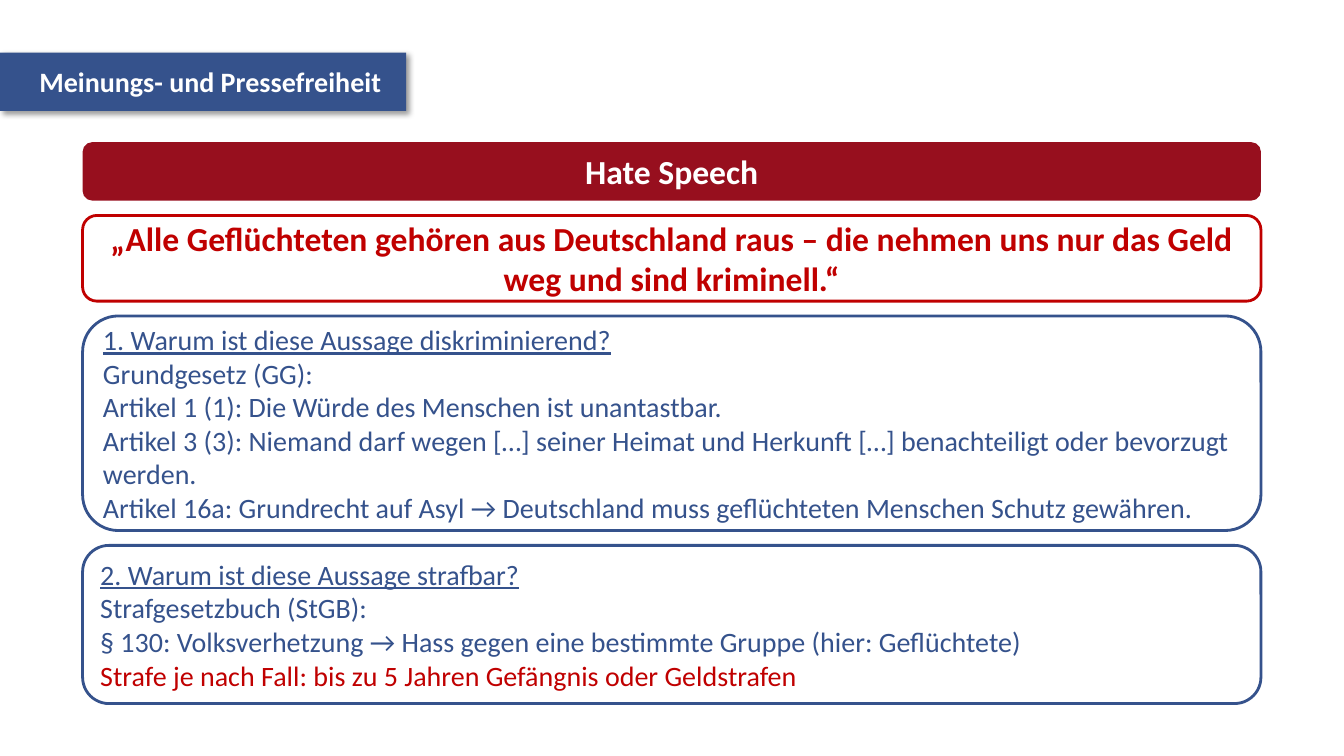
from lxml.etree import SubElement
from pptx import Presentation
from pptx.dml.color import RGBColor
from pptx.enum.shapes import MSO_SHAPE
from pptx.enum.text import MSO_ANCHOR, MSO_AUTO_SIZE, PP_ALIGN
from pptx.oxml.ns import qn
from pptx.util import Pt

BLUE = RGBColor(0x35, 0x52, 0x8C)
DARK_RED = RGBColor(0x97, 0x0F, 0x1E)
RED = RGBColor(0xC0, 0x00, 0x00)
WHITE = RGBColor(0xFF, 0xFF, 0xFF)

# Content: each paragraph is a list of (line, format) pairs
HEADING = {"size": Pt(24), "bold": True}
BODY = {"size": Pt(20), "color": BLUE}
QUESTION = {**BODY, "underline": True}

TOPIC = [[("Meinungs- und Pressefreiheit", {"size": Pt(20), "bold": True, "color": WHITE})]]
TITLE = [[("Hate Speech", {**HEADING, "color": WHITE})]]
QUOTE = [[("„Alle Geflüchteten gehören aus Deutschland raus – die nehmen uns nur das Geld "
           "weg und sind kriminell.“", {**HEADING, "color": RED})]]
DISCRIMINATION = [
    [("1. Warum ist diese Aussage diskriminierend?", QUESTION)],
    [("Grundgesetz (GG):", BODY)],
    [("Artikel 1 (1): Die Würde des Menschen ist unantastbar.", BODY)],
    [("Artikel 3 (3): Niemand darf wegen […] seiner Heimat und Herkunft […] "
      "benachteiligt oder bevorzugt werden.", BODY)],
    [("Artikel 16a: Grundrecht auf Asyl → Deutschland muss geflüchteten Menschen "
      "Schutz gewähren.", BODY)],
]
PENALTY = [
    [("2. Warum ist diese Aussage strafbar?", QUESTION)],
    [("Strafgesetzbuch (StGB):", BODY)],
    [("§ 130: Volksverhetzung → Hass gegen eine bestimmte Gruppe (hier: Geflüchtete)", BODY),
     ("Strafe je nach Fall: bis zu 5 Jahren Gefängnis oder Geldstrafen", {**BODY, "color": RED})],
]

# Stacked panels: content, height, fill, outline, alignment, space after
PANELS = [
    (TITLE, 41.8, DARK_RED, None, PP_ALIGN.CENTER, 18),
    (QUOTE, 61.2, None, RED, PP_ALIGN.CENTER, 18),
    (DISCRIMINATION, 153.3, None, BLUE, PP_ALIGN.LEFT, 0),
    (PENALTY, 113, None, BLUE, PP_ALIGN.LEFT, 0),
]
PANEL_LEFT, PANEL_TOP, PANEL_WIDTH, PANEL_GAP = 59, 101.5, 841.7, 10.6


def add_box(slide, kind, left, top, width, height, fill, outline):
    box = slide.shapes.add_shape(kind, Pt(left), Pt(top), Pt(width), Pt(height))
    box.shadow.inherit = False
    if fill is None:
        box.fill.background()
    else:
        box.fill.solid()
        box.fill.fore_color.rgb = fill
    if outline is None:
        box.line.fill.background()
    else:
        box.line.color.rgb = outline
        box.line.width = Pt(2)
    return box


def write(frame, content, alignment, space_after=0):
    for number, lines in enumerate(content):
        paragraph = frame.add_paragraph() if number else frame.paragraphs[0]
        paragraph.alignment = alignment
        paragraph.space_after = Pt(space_after)
        for position, (words, formats) in enumerate(lines):
            if position:
                paragraph.add_line_break()
            run = paragraph.add_run()
            run.text = words
            run.font.name = "Calibri"
            for key, value in formats.items():
                if key == "color":
                    run.font.color.rgb = value
                else:
                    setattr(run.font, key, value)


def add_drop_shadow(box):
    effects = box._element.spPr.find(qn("a:effectLst"))
    shadow = SubElement(effects, qn("a:outerShdw"), blurRad=str(Pt(4)), dist=str(Pt(3)),
                        dir="2700000", algn="tl", rotWithShape="0")
    color = SubElement(shadow, qn("a:srgbClr"), val="000000")
    SubElement(color, qn("a:alpha"), val="40000")


def main():
    deck = Presentation()
    deck.slide_width, deck.slide_height = Pt(960), Pt(540)
    slide = deck.slides.add_slide(deck.slide_layouts[6])

    # Topic banner at the left edge
    banner = add_box(slide, MSO_SHAPE.RECTANGLE, 0, 37.5, 290.2, 41.8, BLUE, None)
    add_drop_shadow(banner)
    banner_format = {
        "margin_left": Pt(28.1), "margin_top": Pt(8.6),
        "margin_right": Pt(14.4), "margin_bottom": Pt(8.6),
        "word_wrap": False, "auto_size": MSO_AUTO_SIZE.SHAPE_TO_FIT_TEXT,
        "vertical_anchor": MSO_ANCHOR.TOP,
    }
    for key, value in banner_format.items():
        setattr(banner.text_frame, key, value)
    write(banner.text_frame, TOPIC, PP_ALIGN.LEFT)

    # Panels from top to bottom
    top = PANEL_TOP
    for content, height, fill, outline, alignment, space_after in PANELS:
        panel = add_box(slide, MSO_SHAPE.ROUNDED_RECTANGLE, PANEL_LEFT, top,
                        PANEL_WIDTH, height, fill, outline)
        panel.text_frame.word_wrap = True
        panel.text_frame.vertical_anchor = MSO_ANCHOR.MIDDLE
        write(panel.text_frame, content, alignment, space_after)
        top += height + PANEL_GAP

    deck.save("out.pptx")


if __name__ == "__main__":
    main()
